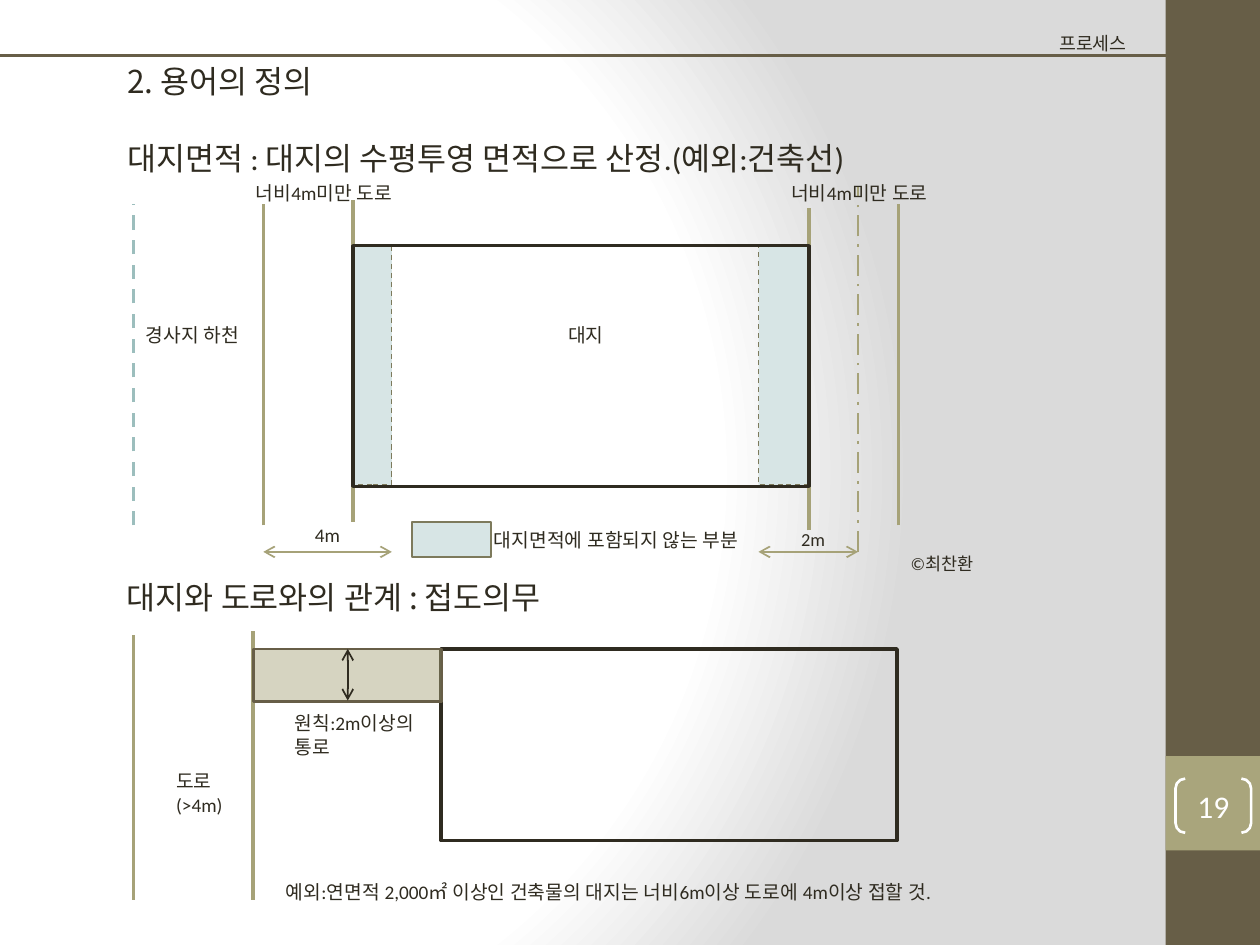
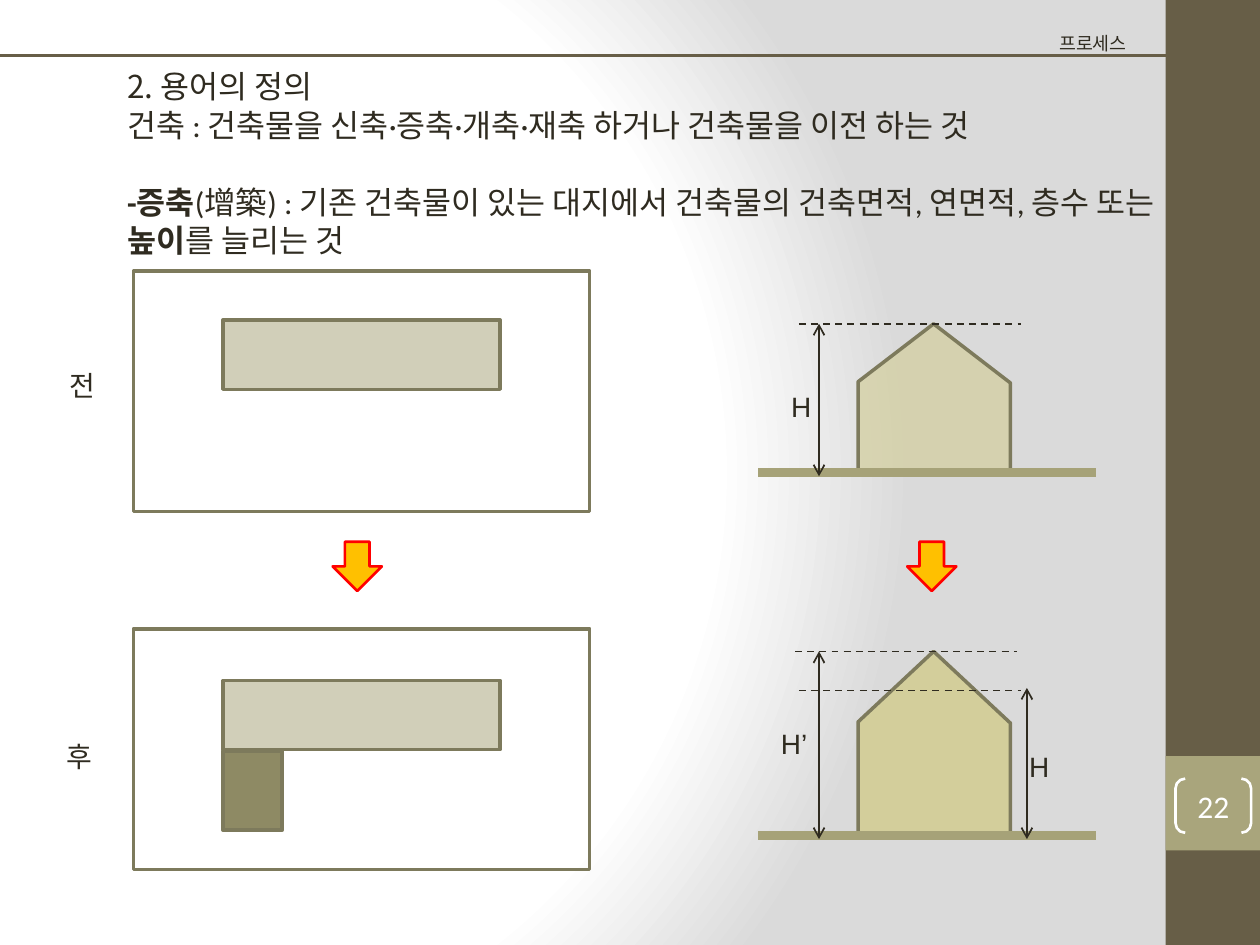
from dataclasses import dataclass

from lxml import etree
from pptx import Presentation
from pptx.dml.color import RGBColor
from pptx.enum.dml import MSO_LINE_DASH_STYLE as DASH
from pptx.enum.shapes import MSO_CONNECTOR, MSO_SHAPE as SHAPE
from pptx.enum.text import MSO_ANCHOR as ANCHOR, MSO_AUTO_SIZE, PP_ALIGN as ALIGN
from pptx.oxml import parse_xml
from pptx.oxml.ns import nsdecls, qn
from pptx.util import Inches, Pt


@dataclass(frozen=True)
class Theme:
    ink: str = "2F2B20"
    white: str = "FFFFFF"
    shade: str = "DADADA"
    brown: str = "675E47"
    olive: str = "A9A57C"
    road: str = "A6A278"
    edge: str = "7D7A5C"
    extension: str = "858157"
    house: str = "D3CE9B"
    teal: str = "9CBEBD"
    excluded: str = "D7E5E5"
    amber: str = "FFC000"
    red: str = "FF0000"
    body: str = "Calibri"
    sans: str = "Arial"
    heading: str = "Noto Sans CJK KR"
    title_size: float = 18
    letter_size: float = 16
    label_size: float = 11
    small_size: float = 10.5
    credit_size: float = 10


class Deck:
    """Holds the theme and the current slide, and draws each kind of element."""

    def __init__(self, theme):
        self.t = theme
        self.prs = Presentation()
        self.prs.slide_width, self.prs.slide_height = Inches(10), Inches(7.5)
        self.layout = self.prs.slide_layouts[5]
        self.s = None

    def background(self):
        t = self.t
        stops = "".join(
            f'<a:gs pos="{pos}000"><a:srgbClr val="{c}"/></a:gs>'
            for pos, c in ((0, t.white), (75, t.white), (100, t.shade)))
        bg = parse_xml(
            f'<p:bg {nsdecls("p", "a")}><p:bgPr><a:gradFill rotWithShape="1">'
            f'<a:gsLst>{stops}</a:gsLst><a:path path="circle">'
            '<a:fillToRect l="20000" t="50000" r="100000" b="50000"/></a:path>'
            '</a:gradFill><a:effectLst/></p:bgPr></p:bg>')
        self.layout._element.cSld.insert(0, bg)

    def bands(self):
        for top, height, color in ((0, 7.5, self.t.brown), (6, 0.75, self.t.olive)):
            sp = self.shape(9.25, top, 0.75, height, color)
            self.layout.shapes._spTree.append(sp._element)

    def slide(self, number, title_box, title):
        first = self.s is None
        self.s = self.prs.slides.add_slide(self.layout)
        if first:
            self.background()
            self.bands()
        self.title(title_box, title)
        t = self.t
        sp = self.shape(9.33, 6.18, 0.6, 0.43, None, t.white, 1.5, SHAPE.DOUBLE_BRACKET)
        sp.adjustments[0] = 0.179
        tf = sp.text_frame
        tf.margin_left = tf.margin_right = tf.margin_top = tf.margin_bottom = 0
        tf.vertical_anchor = ANCHOR.MIDDLE
        p = tf.paragraphs[0]
        p.text = number
        p.alignment = ALIGN.CENTER
        self.font(p.font, t.title_size, t.body, t.white)
        self.line(0, 0.44, 9.25, 0.44, t.brown, 2)
        self.text(8.31, 0.21, 0.87, 0.29, "프로세스", t.small_size)

    def font(self, font, size, name, color=None):
        font.size = Pt(size)
        font.color.rgb = RGBColor.from_string(color or self.t.ink)
        self.face(font, name)

    def face(self, font, name):
        font.name = name
        ea = etree.Element(qn("a:ea"), typeface=self.t.body)
        font._rPr.find(qn("a:latin")).addnext(ea)

    def title(self, box, paragraphs):
        t = self.t
        sp = self.s.shapes.title
        sp.left, sp.top, sp.width, sp.height = map(Inches, box)
        tf = sp.text_frame
        tf.auto_size = MSO_AUTO_SIZE.NONE
        tf.vertical_anchor = ANCHOR.TOP
        for i, (gap, runs) in enumerate(paragraphs):
            p = tf.paragraphs[0] if i == 0 else tf.add_paragraph()
            p.alignment = ALIGN.LEFT
            p.line_spacing = Pt(22)
            p.space_before = Pt(gap)
            self.font(p.font, t.title_size, runs[0][1])
            for content, name, bold in runs:
                r = p.add_run()
                r.text = content
                if name != runs[0][1]:
                    self.face(r.font, name)
                if bold:
                    r.font.bold = True

    def text(self, x, y, w, h, content, size=None, name=None, spacing=None):
        tf = self.s.shapes.add_textbox(*map(Inches, (x, y, w, h))).text_frame
        tf.word_wrap = True
        tf.text = content
        for p in tf.paragraphs:
            if spacing:
                p.line_spacing = Pt(spacing)
            self.font(p.font, size or self.t.label_size, name or self.t.body)

    def style(self, sp, fill, line, width, alpha, dash=None):
        sp.shadow.inherit = False
        if fill:
            sp.fill.solid()
            sp.fill.fore_color.rgb = RGBColor.from_string(fill)
            if alpha < 100:
                clr = sp._element.spPr.find(qn("a:solidFill"))[0]
                etree.SubElement(clr, qn("a:alpha"), val=str(alpha * 1000))
        else:
            sp.fill.background()
        if line:
            sp.line.color.rgb = RGBColor.from_string(line)
            sp.line.width = Pt(width)
            if dash:
                sp.line.dash_style = dash
        else:
            sp.line.fill.background()
        return sp

    def shape(self, x, y, w, h, fill=None, line=None, width=2, kind=SHAPE.RECTANGLE,
              alpha=100, dash=None):
        sp = self.s.shapes.add_shape(kind, *map(Inches, (x, y, w, h)))
        return self.style(sp, fill, line, width, alpha, dash)

    def outline(self, points, fill, line, alpha=100):
        start, *rest = [tuple(map(Inches, pt)) for pt in points]
        fb = self.s.shapes.build_freeform(*start)
        fb.add_line_segments(rest, close=False)
        self.style(fb.convert_to_shape(), fill, line, 2, alpha)

    def line(self, x1, y1, x2, y2, color, width=1, dash=None, arrows=False):
        c = self.s.shapes.add_connector(
            MSO_CONNECTOR.STRAIGHT, *map(Inches, (x1, y1, x2, y2)))
        c.line.color.rgb = RGBColor.from_string(color)
        c.line.width = Pt(width)
        if dash:
            c.line.dash_style = dash
        if arrows:
            for end in ("a:headEnd", "a:tailEnd"):
                etree.SubElement(c.line._ln, qn(end), type="arrow")
        etree.SubElement(c._element.spPr, qn("a:effectLst"))

    def house(self, top, eaves, ground, alpha):
        t = self.t
        self.outline([(6.81, ground), (6.81, eaves), (7.41, top),
                      (8.02, eaves + 0.01), (8.02, ground)], t.house, t.edge, alpha)
        self.line(6.02, ground, 8.7, ground, t.road, 5)
        self.line(6.5, top, 6.5, ground + 0.03, t.ink, arrows=True)


def site_area(deck):
    t = deck.t
    deck.slide("19", (0.91, 0.44, 8.27, 1.01), [
        (0, [("2. 용어의 정의", t.heading, False)]),
        (22, [("대지면적 ", t.heading, False),
              (": 대지의 수평투영 면적으로 산정.(예외:건축선)", t.body, False)])])
    deck.text(0.91, 4.53, 8.27, 0.4, "대지와 도로와의 관계 : 접도의무",
              t.title_size, t.heading, 22)

    for x, w in ((6.02, 0.39), (2.8, 0.31)):
        deck.shape(x, 1.95, w, 1.9, t.excluded, t.edge, 0, dash=DASH.DASH)
    for x, top, bottom in ((2.8, 1.59, 4.14), (2.09, 1.62, 4.17),
                           (7.13, 1.62, 4.17), (6.42, 1.65, 4.21),
                           (2.01, 5.01, 7.14), (1.06, 5.04, 7.14)):
        deck.line(x, bottom, x, top, t.road, 2)
    deck.line(1.06, 4.17, 1.06, 1.62, t.teal, 2, DASH.DASH)
    deck.line(6.81, 4.38, 6.81, 1.48, t.road, 1.5, DASH.LONG_DASH_DOT)
    deck.shape(3.27, 4.14, 0.63, 0.28, t.excluded, t.edge, 1)
    for x1, x2 in ((6.02, 6.81), (2.09, 3.11)):
        deck.line(x1, 4.38, x2, 4.38, t.road, arrows=True)
    deck.shape(2.8, 1.95, 3.62, 1.91, line=t.ink)

    deck.shape(3.5, 5.15, 3.62, 1.52, line=t.ink)
    deck.shape(2.01, 5.15, 1.5, 0.42, t.olive, t.brown, 1.5, alpha=47)
    deck.line(2.76, 5.15, 2.76, 5.56, t.ink, arrows=True)

    for x, y, w, h, content in (
            (4.41, 2.52, 0.59, 0.29, "대지"),
            (1.06, 2.52, 1.18, 0.29, "경사지 하천"),
            (3.82, 4.14, 2.4, 0.29, "대지면적에 포함되지 않는 부분"),
            (1.93, 1.39, 2.28, 0.29, "너비4m미만 도로"),
            (6.18, 1.39, 2.28, 0.29, "너비4m미만 도로"),
            (2.4, 4.1, 0.55, 0.29, "4m"),
            (2.24, 5.6, 1.26, 0.47, "원칙:2m이상의 통로"),
            (2.17, 6.94, 5.83, 0.29,
             "예외:연면적 2,000㎡ 이상인 건축물의 대지는 너비6m이상 도로에 4m이상 접할 것."),
            (1.3, 6.06, 0.63, 0.47, "도로\n(>4m)")):
        deck.text(x, y, w, h, content)
    deck.text(6.26, 4.14, 0.55, 0.28, "2m", t.small_size)
    deck.text(7.13, 4.34, 0.94, 0.28, "©최찬환", t.credit_size)


def extension(deck):
    t = deck.t
    deck.slide("22", (0.91, 0.48, 8.5, 1.62), [
        (0, [("2. 용어의 정의", t.heading, False)]),
        (0, [("건축 ", t.sans, False),
             (": 건축물을 신축·증축·개축·재축 하거나 건축물을 이전 하는 것", t.body, False)]),
        (22, [("-증축", t.body, True),
              ("(增築) : 기존 건축물이 있는 대지에서 건축물의 건축면적, 연면적, 층수 또는 ",
               t.body, False),
              ("높이", t.body, True),
              ("를 늘리는 것", t.body, False)])])

    for site_top, building_top in ((2.15, 2.54), (4.99, 5.4)):
        deck.shape(1.06, site_top, 3.62, 1.91, line=t.edge)
        deck.shape(1.77, building_top, 2.2, 0.55, t.olive, t.edge, alpha=53)
    deck.shape(1.77, 5.96, 0.47, 0.63, t.extension, t.edge, alpha=92)
    for x in (2.64, 7.2):
        deck.shape(x, 4.3, 0.39, 0.39, t.amber, t.red, 1.5, SHAPE.DOWN_ARROW)

    deck.house(2.57, 3.03, 3.75, 68)
    deck.house(5.17, 5.73, 6.63, 100)
    for x, y in ((6.34, 2.57), (6.31, 5.17), (6.34, 5.48)):
        deck.line(x, y, x + 1.76, y, t.ink, 1, DASH.DASH)
    deck.line(8.15, 5.46, 8.15, 6.66, t.ink, arrows=True)

    for x, y, w, content, name in (
            (0.45, 2.88, 0.39, "전", t.body), (0.43, 5.82, 0.39, "후", t.body),
            (6.18, 3.04, 0.31, "H", t.sans), (6.1, 5.72, 0.47, "H’", t.sans),
            (8.07, 5.9, 0.31, "H", t.sans)):
        deck.text(x, y, w, 0.37, content, t.letter_size, name)


def main():
    deck = Deck(Theme())
    site_area(deck)
    extension(deck)
    deck.prs.save("out.pptx")


if __name__ == "__main__":
    main()
